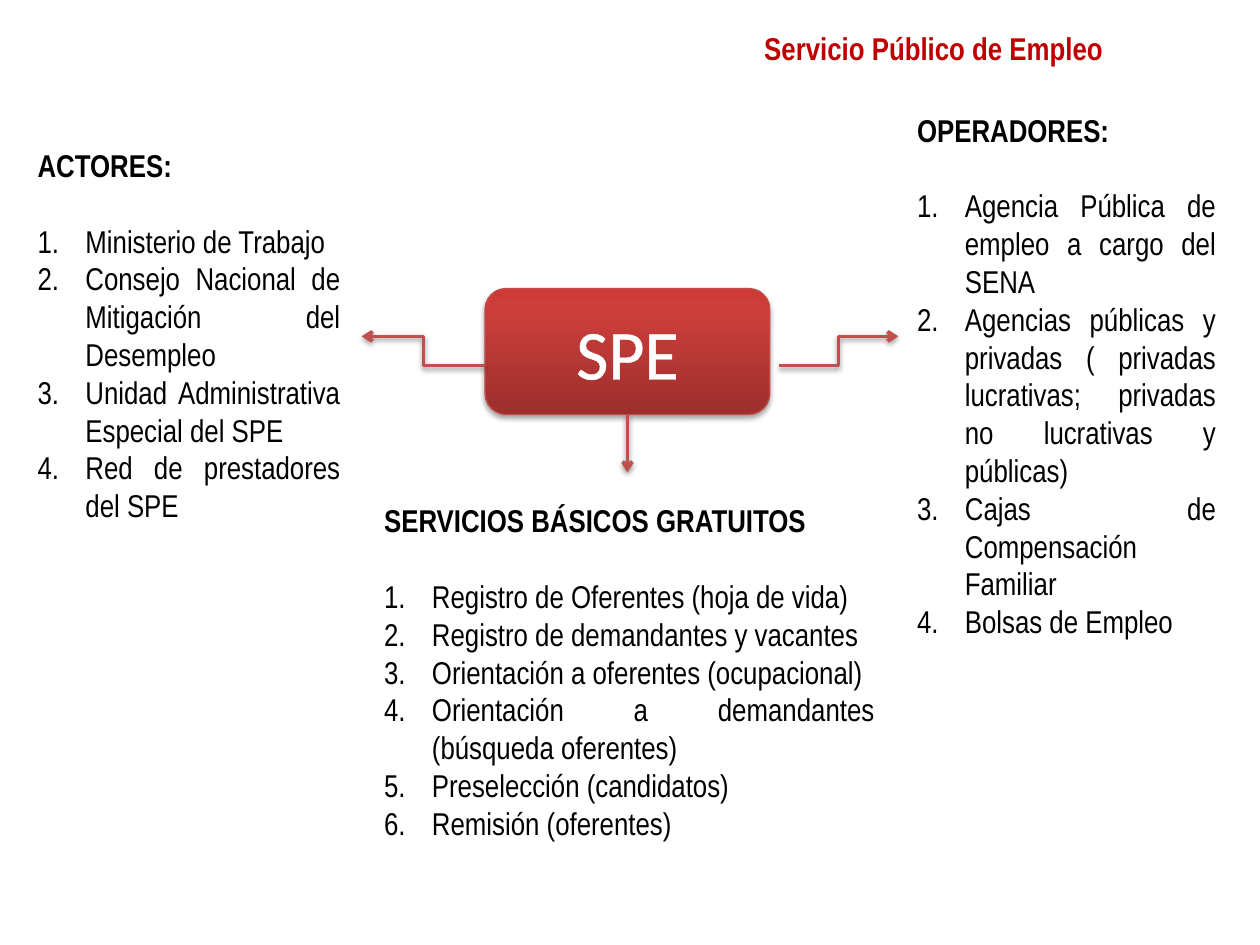
from lxml.etree import SubElement
from pptx import Presentation
from pptx.dml.color import RGBColor
from pptx.enum.shapes import MSO_CONNECTOR, MSO_SHAPE
from pptx.enum.text import MSO_ANCHOR, MSO_AUTO_SIZE, PP_ALIGN
from pptx.oxml import parse_xml
from pptx.oxml.ns import nsdecls, qn
from pptx.util import Inches, Pt

COLORS = {"title": "C00000", "text": "000000", "light": "FFFFFF", "arrow": "C0504D",
          "border": "BF4C48", "shadow": "000000"}
BOX_GRADIENT = [(0, "9C2F2D"), (80, "CB3E3A"), (100, "CE3B37")]
BODY = {"name": "Arial Narrow", "size": Pt(18), "bold": False}
HEADING = {**BODY, "bold": True}
BOX_TEXT = {"name": "Calibri", "size": Pt(40), "bold": False}

LISTS = [
    ((0.2, 1.11, 2.6, 3.43), "ACTORES:", [
        "Ministerio de Trabajo",
        "Consejo Nacional de Mitigación del Desempleo",
        "Unidad Administrativa Especial del SPE",
        "Red de prestadores del SPE"]),
    ((7.18, 0.83, 2.57, 4.64), "OPERADORES:", [
        "Agencia Pública de empleo a cargo del SENA",
        "Agencias públicas y privadas ( privadas lucrativas; privadas no lucrativas y públicas)",
        "Cajas de Compensación Familiar",
        "Bolsas de Empleo"]),
    ((2.95, 3.93, 4.09, 2.83), "SERVICIOS BÁSICOS GRATUITOS", [
        "Registro de Oferentes (hoja de vida)",
        "Registro de demandantes y vacantes",
        "Orientación a oferentes (ocupacional)",
        "Orientación a demandantes (búsqueda oferentes)",
        "Preselección (candidatos)",
        "Remisión (oferentes)"]),
]


class SlideBuilder:
    """Draws styled elements on the current slide."""

    def __init__(self, slide):
        self.slide = slide

    def add_text(self, paragraph, text, style, color, alignment):
        paragraph.alignment = alignment
        run = paragraph.add_run()
        run.text = text
        for name, value in style.items():
            setattr(run.font, name, value)
        run.font.color.rgb = RGBColor.from_string(COLORS[color])
        return run

    def add_shadow(self, effects, opacity, distance):
        shadow = SubElement(effects, qn("a:outerShdw"), blurRad=str(Pt(3.1)), dist=str(Pt(distance)),
                            dir="5400000", rotWithShape="0")
        color = SubElement(shadow, qn("a:srgbClr"), val=COLORS["shadow"])
        SubElement(color, qn("a:alpha"), val=str(opacity * 1000))

    def title(self, position, text):
        title = self.slide.shapes.title
        title.left, title.top, title.width, title.height = map(Inches, position)
        frame = title.text_frame
        frame.word_wrap = True
        frame.auto_size = MSO_AUTO_SIZE.SHAPE_TO_FIT_TEXT
        frame.vertical_anchor = MSO_ANCHOR.TOP
        self.add_text(frame.paragraphs[0], text, HEADING, "title", PP_ALIGN.CENTER)

    def numbered_list(self, position, heading, items):
        frame = self.slide.shapes.add_textbox(*map(Inches, position)).text_frame
        frame.word_wrap = True
        frame.auto_size = MSO_AUTO_SIZE.SHAPE_TO_FIT_TEXT
        first = frame.paragraphs[0]
        first.space_after = Pt(21.6)
        self.add_text(first, heading, HEADING, "text", PP_ALIGN.JUSTIFY)
        for item in items:
            paragraph = frame.add_paragraph()
            properties = paragraph._p.get_or_add_pPr()
            properties.set("marL", str(Inches(0.38)))
            properties.set("indent", str(-Inches(0.38)))
            SubElement(properties, qn("a:buFont"), typeface="+mj-lt")
            SubElement(properties, qn("a:buAutoNum"), type="arabicPeriod")
            self.add_text(paragraph, item, BODY, "text", PP_ALIGN.JUSTIFY)

    def gradient_box(self, position, text):
        shape = self.slide.shapes.add_shape(MSO_SHAPE.ROUNDED_RECTANGLE, *map(Inches, position))
        stops = "".join(f'<a:gs pos="{place * 1000}"><a:srgbClr val="{color}"/></a:gs>'
                        for place, color in BOX_GRADIENT)
        properties = shape._element.spPr
        properties.append(parse_xml(
            f'<a:gradFill {nsdecls("a")} rotWithShape="1"><a:gsLst>{stops}</a:gsLst>'
            '<a:lin ang="16200000" scaled="0"/></a:gradFill>'))
        shape.line.color.rgb = RGBColor.from_string(COLORS["border"])
        shape.line.width = Pt(0.75)
        shape.shadow.inherit = False
        self.add_shadow(properties.find(qn("a:effectLst")), 35, 1.8)
        frame = shape.text_frame
        frame.vertical_anchor = MSO_ANCHOR.MIDDLE
        run = self.add_text(frame.paragraphs[0], text, BOX_TEXT, "light", PP_ALIGN.CENTER)
        outline = parse_xml(
            f'<a:ln {nsdecls("a")} w="{Pt(1.45)}"><a:solidFill>'
            f'<a:srgbClr val="{COLORS["light"]}"/></a:solidFill></a:ln>')
        run._r.get_or_add_rPr().insert(0, outline)
        return shape

    def arrow(self, kind, start, end):
        connector = self.slide.shapes.add_connector(kind, *map(Inches, start + end))
        connector.line.color.rgb = RGBColor.from_string(COLORS["arrow"])
        connector.line.width = Pt(2)
        SubElement(connector.line._get_or_add_ln(), qn("a:tailEnd"), type="arrow")
        effects = SubElement(connector._element.spPr, qn("a:effectLst"))
        self.add_shadow(effects, 38, 1.6)
        return connector


def main():
    presentation = Presentation()
    presentation.slide_width, presentation.slide_height = Inches(10), Inches(7.5)
    builder = SlideBuilder(presentation.slides.add_slide(presentation.slide_layouts[5]))
    builder.title((5.4, 0.18, 4.02, 0.4), "Servicio Público de Empleo")
    box = builder.gradient_box((3.85, 2.29, 2.26, 1), "SPE")
    for position, heading, items in LISTS:
        builder.numbered_list(position, heading, items)
    builder.arrow(MSO_CONNECTOR.ELBOW, (3.85, 2.9), (2.87, 2.67))
    builder.arrow(MSO_CONNECTOR.ELBOW, (6.18, 2.9), (7.13, 2.67))
    down = builder.arrow(MSO_CONNECTOR.STRAIGHT, (4.98, 3.29), (4.98, 3.75))
    down.begin_connect(box, 2)
    presentation.save("out.pptx")


if __name__ == "__main__":
    main()
